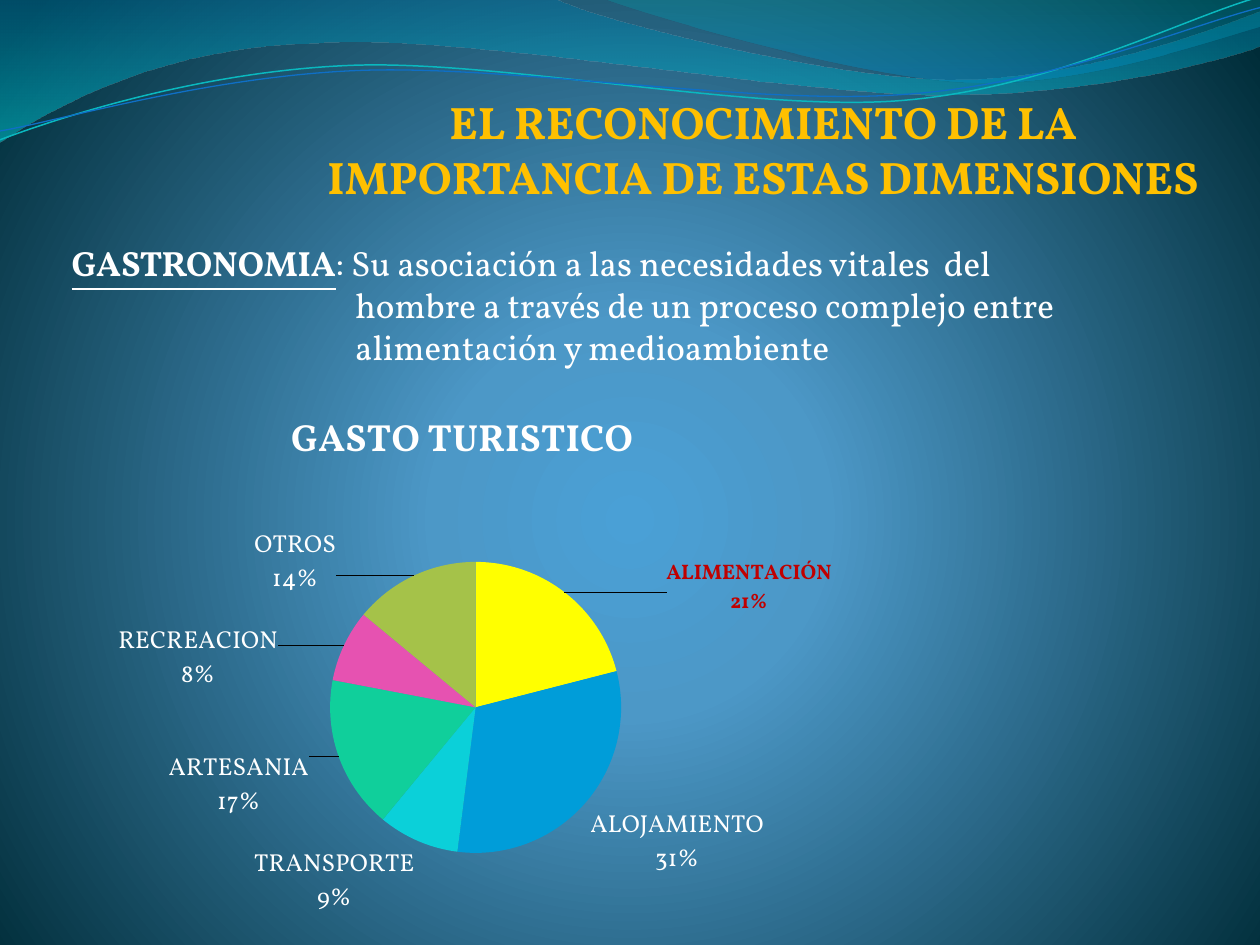
"""Build the slide on gastronomy and the breakdown of tourist spending."""
from math import cos, radians, sin
from lxml.etree import SubElement
from pptx import Presentation
from pptx.chart.data import CategoryChartData
from pptx.dml.color import RGBColor as Color
from pptx.enum.chart import XL_CHART_TYPE as ChartType, XL_LABEL_POSITION as LabelPosition
from pptx.enum.text import MSO_ANCHOR as Anchor, MSO_AUTO_SIZE as AutoSize, PP_ALIGN as Align
from pptx.oxml import parse_xml
from pptx.oxml.ns import nsdecls, qn
from pptx.util import Inches, Pt

FONT = "Vollkorn"
COLORS = {"title": "FFC000", "text": "FFFFFF", "accent": "C00000",
          "glow": "4AA0D6", "halo": "4C98C7", "edge": "002C38",
          "wave_top": "0074A1", "wave_bottom": "00C6CF",
          "crest_top": "00A1A9", "crest_bottom": "008BBF",
          "cyan_line": "0AB8BF", "blue_line": "0F6FC6"}


def gradient(stops, direction):
    """Return a gradient fill from (position, colour, opacity) stops."""
    marks = ""
    for position, name, opacity in stops:
        alpha = f'<a:alpha val="{opacity * 1000}"/>' if opacity < 100 else ""
        marks += (f'<a:gs pos="{position * 1000}">'
                  f'<a:srgbClr val="{COLORS[name]}">{alpha}</a:srgbClr></a:gs>')
    return parse_xml(f'<a:gradFill {nsdecls("a")} rotWithShape="1">'
                     f'<a:gsLst>{marks}</a:gsLst>{direction}</a:gradFill>')


def add_outline(page, frame, segments, close, turn=0):
    """Add a freeform from points (2 numbers) and cubic curves (6 numbers)."""
    left, top, width, height = frame
    center_x, center_y = left + width / 2, top + height / 2
    cosine, sine = cos(radians(turn)), sin(radians(turn))
    builder = page.shapes.build_freeform()
    builder.add_line_segments([(Inches(x), Inches(y)) for *_, x, y in segments], close=close)
    shape = builder.convert_to_shape()
    shape.left, shape.top, shape.width, shape.height = map(Inches, frame)
    shape.rotation = -turn % 360
    shape.shadow.inherit = False
    outline = shape.element.find(".//" + qn("a:path"))
    outline.set("w", str(Inches(width)))
    outline.set("h", str(Inches(height)))
    for step in list(outline):
        outline.remove(step)
    for index, segment in enumerate(segments):
        tag = "moveTo" if index == 0 else "lnTo" if len(segment) == 2 else "cubicBezTo"
        step = SubElement(outline, qn(f"a:{tag}"))
        for x, y in zip(segment[::2], segment[1::2]):
            across, down = x - center_x, y - center_y
            point = SubElement(step, qn("a:pt"))
            point.set("x", str(Inches(across * cosine - down * sine + width / 2)))
            point.set("y", str(Inches(across * sine + down * cosine + height / 2)))
    if close:
        SubElement(outline, qn("a:close"))
    return shape


deck = Presentation()
deck.slide_width, deck.slide_height = Inches(10), Inches(7.5)
page = deck.slides.add_slide(deck.slide_layouts[5])

page.background.fill.solid()
background = page.element.find(".//" + qn("p:bgPr"))
background.replace(background[0], gradient(
    [(0, "glow", 100), (25, "halo", 100), (100, "edge", 100)],
    '<a:path path="circle"><a:fillToRect l="10000" t="110000" r="10000" b="100000"/></a:path>'))

waves = [
    ((-0.01, -0.01, 10.02, 1.14),
     [(0, 0), (4.4, -0.01), (4.76, 0.17, 6.64, 0.63, 7.58, 0.63),
      (8.53, 0.63, 9.58, 0.26, 10, 0.09), (10.01, 0.36),
      (9.83, 0.44, 8.7, 0.76, 7.46, 0.75), (6.22, 0.75, 3.82, 0.28, 2.57, 0.34),
      (1.29, 0.36, 0.46, 0.83, -0.01, 1.13), (0, 0)],
     [(0, "wave_top", 45), (100, "wave_bottom", 55)]),
    ((4.79, -0.01, 5.21, 0.7),
     [(4.79, -0.01), (5.09, 0.11, 6.82, 0.62, 7.69, 0.65),
      (8.56, 0.69, 9.61, 0.32, 10, 0.21), (10, 0), (4.79, -0.01)],
     [(0, "crest_top", 30), (80, "crest_bottom", 45)]),
]
for frame, segments, stops in waves:
    wave = add_outline(page, frame, segments, True)
    wave.line.fill.background()
    geometry = wave.element.spPr.find(qn("a:custGeom"))
    geometry.addnext(gradient(stops, '<a:lin ang="5400000" scaled="1"/>'))

ripples = [
    ((-0.02, 0.22, 10.02, 0.71),
     [(0, 1.11), (0.48, 0.93, 1.58, 0.57, 2.77, 0.52), (3.95, 0.47, 5.93, 0.89, 7.13, 0.8),
      (8.33, 0.71, 9.38, 0.15, 9.98, -0.02)], "cyan_line", 0.85),
    ((-0.02, 0.3, 10.03, 0.58),
     [(0, 1.04), (0.47, 0.96, 1.64, 0.61, 2.83, 0.56), (4.03, 0.51, 5.97, 0.84, 7.17, 0.75),
      (8.36, 0.67, 9.41, 0.21, 10, 0.06)], "blue_line", 0.75),
]
for frame, segments, name, width in ripples:
    ripple = add_outline(page, frame, segments, False, 2.7)
    ripple.fill.background()
    ripple.line.color.rgb = Color.from_string(COLORS[name])
    ripple.line.width = Pt(width)

title = page.shapes.title
title.element.getparent().append(title.element)
title.left, title.top, title.width, title.height = map(Inches, (2.5, 0.7, 7.19, 1.17))
frame = title.text_frame
frame.auto_size, frame.vertical_anchor, frame.word_wrap = AutoSize.NONE, Anchor.TOP, True
frame.margin_left, frame.margin_right = Inches(0), Inches(0.07)
para = frame.paragraphs[0]
para.alignment = Align.CENTER
span = para.add_run()
span.text = "EL RECONOCIMIENTO DE LA IMPORTANCIA DE ESTAS DIMENSIONES"
span.font.name, span.font.size, span.font.bold = FONT, Pt(26), True
span.font.color.rgb = Color.from_string(COLORS["title"])

box = page.shapes.add_textbox(Inches(0.47), Inches(1.87), Inches(8.2), Inches(1.11))
box.text_frame.word_wrap = True
box.text_frame.auto_size = AutoSize.SHAPE_TO_FIT_TEXT
para = box.text_frame.paragraphs[0]
properties = para._p.get_or_add_pPr()
properties.set("marL", str(Inches(2.25)))
properties.set("indent", str(Inches(-2.25)))
for text, strong in [
    ("GASTRONOMIA", True),
    (": Su asociación a las necesidades vitales  del hombre a través de un proceso "
     "complejo entre alimentación y medioambiente", False),
]:
    span = para.add_run()
    span.text = text
    span.font.name, span.font.size = FONT, Pt(20)
    span.font.bold = span.font.underline = strong
    span.font.color.rgb = Color.from_string(COLORS["text"])

spending = [("ALIMENTACIÓN", 21, "FFFF00"), ("ALOJAMIENTO", 31, "009DD9"),
            ("TRANSPORTE", 9, "0BD0D9"), ("ARTESANIA", 17, "10CF9B"),
            ("RECREACION", 8, "E652B1"), ("OTROS", 14, "A5C249")]
chart_width, chart_height = 7.34, 4.44
chart_data = CategoryChartData()
chart_data.categories = [category for category, _, _ in spending]
chart_data.add_series("Series 1", [value for _, value, _ in spending])
chart = page.shapes.add_chart(ChartType.PIE, Inches(0), Inches(3.06), Inches(chart_width),
                              Inches(chart_height), chart_data).chart
chart.has_legend = False
chart.font.name, chart.font.size = FONT, Pt(18)
chart.font.color.rgb = Color.from_string(COLORS["text"])
chart.has_title = True
span = chart.chart_title.text_frame.paragraphs[0].add_run()
span.text = "GASTO TURISTICO"
span.font.name, span.font.size, span.font.bold = FONT, Pt(21.6), True
span.font.color.rgb = Color.from_string(COLORS["text"])

plot = chart.plots[0]
plot.vary_by_categories = True
series = plot.series[0]
for index, (_, _, shade) in enumerate(spending):
    slice_format = series.points[index].format
    slice_format.fill.solid()
    slice_format.fill.fore_color.rgb = Color.from_string(shade)
    slice_format.line.fill.background()

labels = series.data_labels
labels.position = LabelPosition.OUTSIDE_END
labels.number_format, labels.number_format_is_linked = "0%", False
labels.font.name, labels.font.size = FONT, Pt(14)
labels.font.color.rgb = Color.from_string(COLORS["text"])

label_shifts = {0: (0.77, 0.25), 3: (-0.18, -0.06), 4: (-0.47, 0.4), 5: (-0.59, 0.22)}
for index in label_shifts:
    label = series.points[index].data_label
    label.position = LabelPosition.OUTSIDE_END
    label.font.name, label.font.bold = FONT, index == 0
    label.font.size = Pt(12 if index == 0 else 14)
    label.font.color.rgb = Color.from_string(COLORS["accent" if index == 0 else "text"])

for tag, value in [("showVal", "0"), ("showCatName", "1"), ("showPercent", "1")]:
    for flag in chart.element.iter(qn(f"c:{tag}")):
        flag.set("val", value)
for flag in list(chart.element.iter(qn("c:showBubbleSize"))):
    flag.addnext(parse_xml(f'<c:separator {nsdecls("c")}>\n</c:separator>'))

plot_area = chart.element.find(".//" + qn("c:plotArea"))
for old_layout in plot_area.findall(qn("c:layout")):
    plot_area.remove(old_layout)
placements = [(plot_area, 0, [("layoutTarget", "inner"), ("xMode", "edge"), ("yMode", "edge"),
                              ("x", 2.62 / chart_width), ("y", 1.4 / chart_height),
                              ("w", 2.31 / chart_width), ("h", 2.31 / chart_height)])]
for label, (x, y) in zip(chart.element.iter(qn("c:dLbl")), label_shifts.values()):
    placements.append((label, 1, [("x", x / chart_width), ("y", y / chart_height)]))
for parent, place, settings in placements:
    layout = parse_xml(f'<c:layout {nsdecls("c")}><c:manualLayout/></c:layout>')
    for tag, value in settings:
        SubElement(layout[0], qn(f"c:{tag}")).set("val", str(value))
    parent.insert(place, layout)

deck.save("out.pptx")
